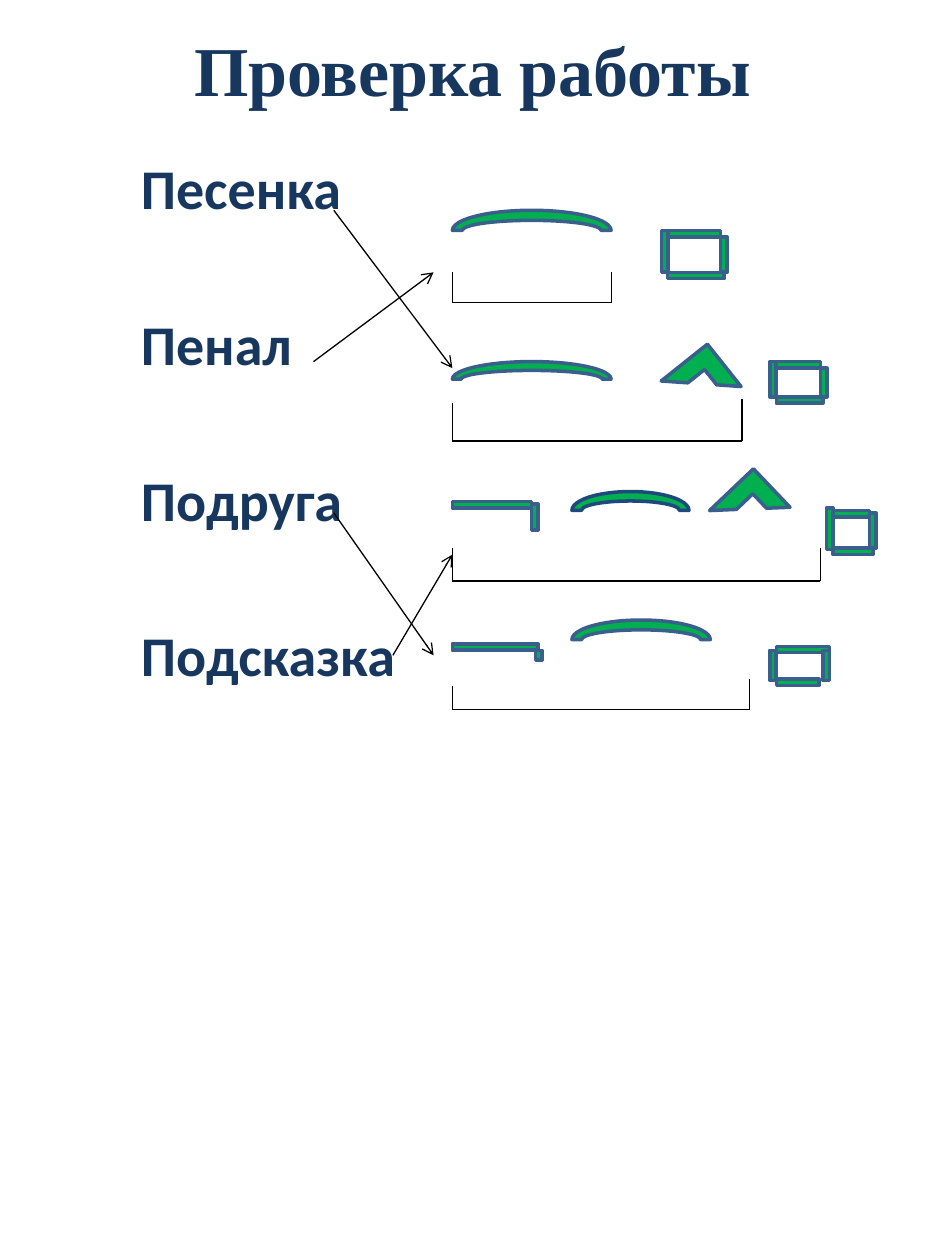
"""Build the slide that matches four words to their morpheme diagrams."""
from lxml.etree import SubElement
from pptx import Presentation
from pptx.dml.color import RGBColor
from pptx.enum.shapes import MSO_CONNECTOR as Link, MSO_SHAPE as Preset
from pptx.enum.text import MSO_ANCHOR as Anchor, PP_ALIGN as Align
from pptx.oxml.ns import qn
from pptx.util import Cm, Pt

NAVY, GREEN, BLUE, DARK_BLUE, BLACK = "17375E", "00B050", "3A5F8C", "1F497D", "000000"
ROOT_LEFT = 9.12
BAR = 0.13


def colour(code):
    return RGBColor.from_string(code)


def add_line(page, x1, y1, x2, y2):
    line = page.shapes.add_connector(Link.STRAIGHT, Cm(x1), Cm(y1), Cm(x2), Cm(y2))
    line.line.color.rgb = colour(BLACK)
    line.line.width = Pt(0.75)
    SubElement(line._element.spPr, qn("a:effectLst"))
    return line


deck = Presentation()
deck.slide_width, deck.slide_height = Cm(19.05), Cm(25.4)
page = deck.slides.add_slide(deck.slide_layouts[6])

texts = [
    (["Проверка работы"], (0, 0, 19.05, 2.77), Anchor.MIDDLE, Align.CENTER,
     {"name": "Times New Roman", "size": Pt(40), "bold": True}),
    (["Песенка", "Пенал", "Подруга", "Подсказка"], (2.59, 2.97, 16.28, 16.08),
     Anchor.TOP, Align.LEFT, {"name": "Calibri", "size": Pt(32), "bold": True}),
]
for lines, place, anchor, align, style in texts:
    box = page.shapes.add_textbox(*map(Cm, place))
    frame = box.text_frame
    frame.word_wrap = True
    frame.vertical_anchor = anchor
    for index, words in enumerate(lines):
        para = frame.paragraphs[0] if index == 0 else frame.add_paragraph()
        para.alignment = align
        if index:
            para.space_before = Pt(50.6)
        span = para.add_run()
        span.text = words
        for key, value in style.items():
            setattr(span.font, key, value)
        span.font.color.rgb = colour(NAVY)

root_arcs = [
    (ROOT_LEFT, 4.24, 3.2, 0.81, BLUE),
    (ROOT_LEFT, 7.29, 3.2, 0.71, BLUE),
    (11.53, 9.91, 2.36, 0.76, DARK_BLUE),
    (11.53, 12.5, 2.79, 0.79, BLUE),
]
suffix_roofs = [
    (13.54, 7.19, 1.19, 1.09, 141.5, True),
    (14.58, 9.65, 1.07, 1.22, 46.4, False),
]
prefix_bars = [
    ((ROOT_LEFT, 10.11, 1.6), (10.72, 10.16, 0.53)),
    ((ROOT_LEFT, 12.98, 1.73), (10.8, 13.11, 0.2)),
]
ending_bars = [
    ((13.39, 4.65, 1.14), (13.34, 4.65, 0.84), (13.46, 5.49, 1.14), (14.53, 4.78, 0.71)),
    ((15.6, 7.29, 0.94), (15.52, 7.29, 0.71), (15.65, 8.0, 0.94), (16.54, 7.42, 0.58)),
    ((16.79, 10.29, 0.74), (16.66, 10.24, 0.84), (16.79, 11.05, 0.81), (17.53, 10.34, 0.71)),
    ((15.65, 13.03, 1.07), (15.52, 13.11, 0.61), (15.65, 13.69, 0.86), (16.59, 13.11, 0.61)),
]

marks = [(Preset.BLOCK_ARC, *arc, 0, False) for arc in root_arcs]
marks += [(Preset.HALF_FRAME, *roof[:4], BLUE, *roof[4:]) for roof in suffix_roofs]
for bars in prefix_bars + ending_bars:
    for index, (left, top, length) in enumerate(bars):
        width, height = (BAR, length) if index % 2 else (length, BAR)
        marks.append((Preset.RECTANGLE, left, top, width, height, BLUE, 0, False))

for preset, left, top, width, height, edge, turn, flipped in marks:
    mark = page.shapes.add_shape(preset, Cm(left), Cm(top), Cm(width), Cm(height))
    mark.shadow.inherit = False
    mark.rotation = turn
    if flipped:
        mark._element.spPr.find(qn("a:xfrm")).set("flipV", "1")
    mark.fill.solid()
    mark.fill.fore_color.rgb = colour(GREEN)
    mark.line.color.rgb = colour(edge)
    mark.line.width = Pt(2)

stem_brackets = [
    (12.32, 5.49, 6.1, 5.49),
    (14.96, 8.13, 8.89, 8.05),
    (16.54, 11.05, 11.71, 11.05),
    (15.11, 13.82, 14.3, 13.69),
]
for right, left_top, bottom, right_top in stem_brackets:
    add_line(page, ROOT_LEFT, left_top, ROOT_LEFT, bottom)
    add_line(page, ROOT_LEFT, bottom, right, bottom)
    add_line(page, right, bottom, right, right_top)

answer_arrows = [
    (6.73, 4.24, 9.12, 7.42),
    (6.32, 7.29, 8.74, 5.49),
    (6.73, 10.34, 8.74, 13.21),
    (7.92, 13.21, 9.12, 11.18),
]
for ends in answer_arrows:
    arrow = add_line(page, *ends)
    SubElement(arrow.line._get_or_add_ln(), qn("a:tailEnd"), type="arrow")

deck.save("out.pptx")
